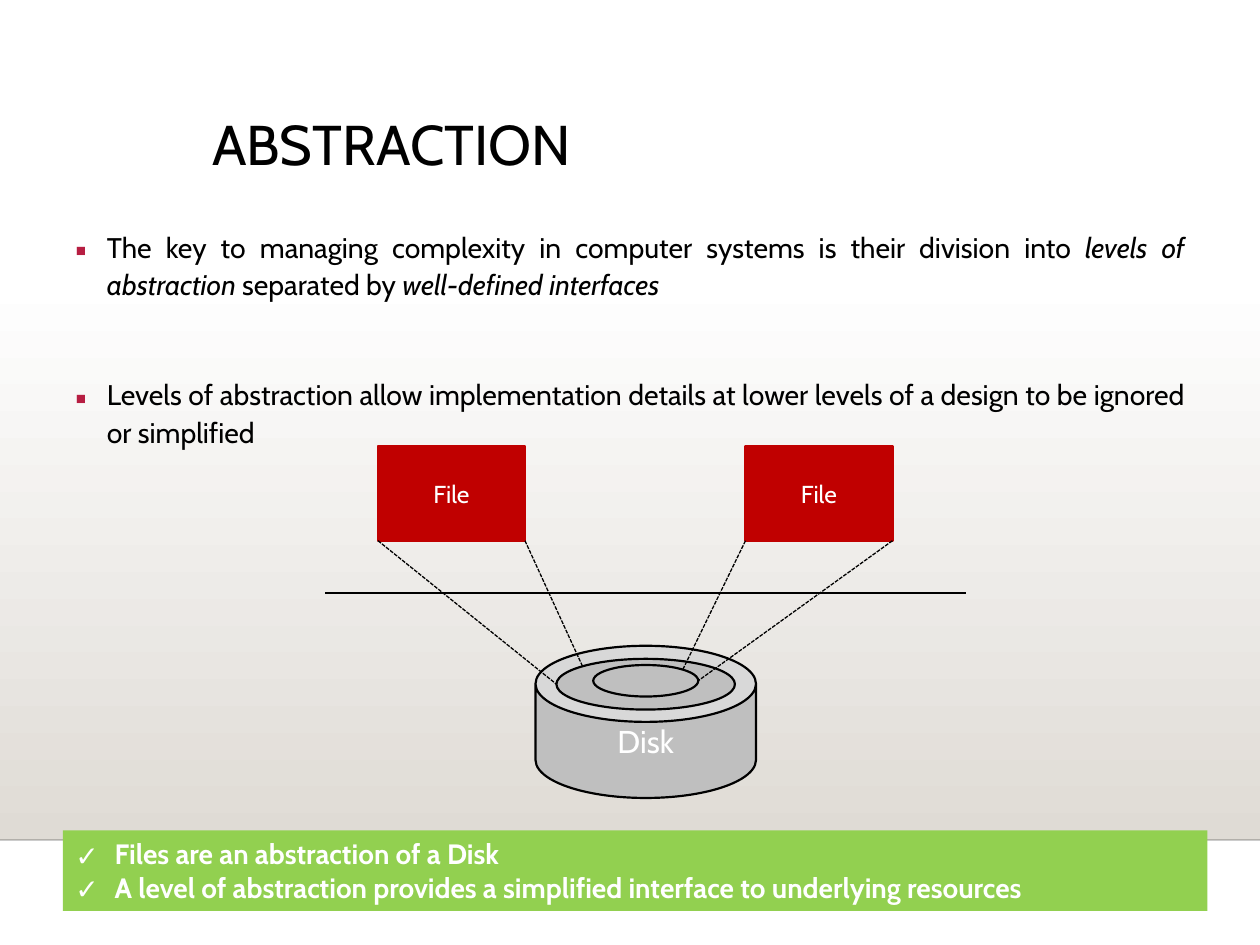
from lxml.etree import SubElement
from pptx import Presentation
from pptx.dml.color import RGBColor
from pptx.enum.dml import MSO_LINE
from pptx.enum.shapes import MSO_CONNECTOR, MSO_SHAPE
from pptx.enum.text import MSO_ANCHOR, MSO_AUTO_SIZE, PP_ALIGN
from pptx.oxml.ns import qn
from pptx.util import Pt

FONT = "Cabin"
BLACK = RGBColor(0x00, 0x00, 0x00)
WHITE = RGBColor(0xFF, 0xFF, 0xFF)
BEIGE = RGBColor(0xDF, 0xDB, 0xD5)
RED = RGBColor(0xC0, 0x00, 0x00)
GREY = RGBColor(0xBF, 0xBF, 0xBF)
GREEN = RGBColor(0x92, 0xD0, 0x50)
CRIMSON = RGBColor(0xB7, 0x1E, 0x42)


def set_font(para, size, color, bold=False):
    font = para.font
    font.name, font.size, font.bold = FONT, Pt(size), bold
    font.color.rgb = color


def add_bullet(para, symbol, indent, color):
    props = para._p.get_or_add_pPr()
    props.set("marL", str(Pt(indent)))
    props.set("indent", str(-Pt(indent)))
    bullet_color = SubElement(props, qn("a:buClr"))
    SubElement(bullet_color, qn("a:srgbClr"), val=str(color))
    SubElement(props, qn("a:buFont"), typeface="Noto Sans Symbols")
    SubElement(props, qn("a:buChar"), char=symbol)


def add_block(page, kind, left, top, width, height, fill, line=None):
    block = page.shapes.add_shape(kind, Pt(left), Pt(top), Pt(width), Pt(height))
    block.shadow.inherit = False
    block.fill.solid()
    block.fill.fore_color.rgb = fill
    if line is None:
        block.line.fill.background()
    else:
        block.line.color.rgb = line
        block.line.width = Pt(1.25)
    return block


def add_label(block, text, size):
    block.text_frame.vertical_anchor = MSO_ANCHOR.MIDDLE
    para = block.text_frame.paragraphs[0]
    para.text = text
    para.alignment = PP_ALIGN.CENTER
    set_font(para, size, WHITE)


def add_line(page, start, end, width, dash=None):
    line = page.shapes.add_connector(
        MSO_CONNECTOR.STRAIGHT, *(Pt(value) for value in (*start, *end)))
    line.line.color.rgb = BLACK
    line.line.width = Pt(width)
    if dash:
        line.line.dash_style = dash
    SubElement(line._element.spPr, qn("a:effectLst"))
    return line


def add_backdrop(page, left, top, width, height):
    # Fade from white down to beige, closed by a faint rule
    fade = add_block(page, MSO_SHAPE.RECTANGLE, left, top, width, height, BEIGE)
    fade.fill.gradient()
    fade.fill.gradient_angle = 270
    for stop, color in zip(fade.fill.gradient_stops, (WHITE, BEIGE)):
        stop.color.rgb = color
    bottom = top + height
    rule = add_line(page, (left, bottom), (left + width, bottom), 1)
    color = next(rule._element.spPr.iter(qn("a:srgbClr")))
    SubElement(color, qn("a:alpha"), val="20000")


def add_title(page, left, top, width, height):
    title = page.shapes.title
    title.left, title.top, title.width, title.height = map(Pt, (left, top, width, height))
    frame = title.text_frame
    frame.auto_size = MSO_AUTO_SIZE.NONE
    frame.vertical_anchor = MSO_ANCHOR.TOP
    para = frame.paragraphs[0]
    para.text = "ABSTRACTION"
    para.alignment = PP_ALIGN.LEFT
    para.line_spacing = 0.9
    set_font(para, 32, BLACK)


def add_body(page, left, top, width, height):
    points = [
        [("The key to managing complexity in computer systems is their division into ", False),
         ("levels of abstraction ", True),
         ("separated by ", False),
         ("well-defined interfaces", True)],
        [("Levels of abstraction allow implementation details at lower levels of a design "
          "to be ignored or simplified", False)],
    ]
    frame = page.shapes.add_textbox(Pt(left), Pt(top), Pt(width), Pt(height)).text_frame
    frame.word_wrap = True
    for index, point in enumerate(points):
        para = frame.add_paragraph() if index else frame.paragraphs[0]
        para.alignment = PP_ALIGN.JUSTIFY
        para.line_spacing = 1.1
        para.space_before = Pt(41.5 if index else 0)
        add_bullet(para, "▪", 18, CRIMSON)
        set_font(para, 16.2, BLACK)
        for text, italic in point:
            span = para.add_run()
            span.text = text
            span.font.italic = italic


def add_diagram(page, left, top, width, height):
    center = left + width / 2
    file_width, file_height = 84, 54
    file_lefts = (left + 30, left + 240)

    # Files above the interface line
    for file_left in file_lefts:
        block = add_block(page, MSO_SHAPE.RECTANGLE, file_left, top,
                          file_width, file_height, RED, RED)
        add_label(block, "File", 14)
    add_line(page, (left, top + 84), (left + width, top + 84), 1)

    # Disk with two tracks
    disk_height = 87
    disk = add_block(page, MSO_SHAPE.CAN, center - 63, top + height - disk_height,
                     126, disk_height, GREY, BLACK)
    disk.adjustments[0] = 0.5
    add_label(disk, "Disk", 18)
    for track_top, track_width, track_height in ((121.5, 102, 29), (125, 60, 18)):
        add_block(page, MSO_SHAPE.OVAL, center - track_width / 2, top + track_top,
                  track_width, track_height, GREY, BLACK)

    # Dashed rays from the lower file corners to the tracks
    corners = [x for file_left in file_lefts for x in (file_left, file_left + file_width)]
    targets = ((-51, 136), (-36, 126), (21, 128), (30, 134))
    for corner, (across, down) in zip(corners, targets):
        add_line(page, (corner, top + file_height), (center + across, top + down),
                 0.75, MSO_LINE.SQUARE_DOT)


def add_summary(page, left, top, width, height):
    bar = add_block(page, MSO_SHAPE.RECTANGLE, left, top, width, height, GREEN)
    frame = bar.text_frame
    frame.vertical_anchor = MSO_ANCHOR.TOP
    lines = ("Files are an abstraction of a Disk",
             "A level of abstraction provides a simplified interface to underlying resources")
    for index, text in enumerate(lines):
        para = frame.add_paragraph() if index else frame.paragraphs[0]
        para.text = text
        para.alignment = PP_ALIGN.LEFT
        add_bullet(para, "✓", 22.5, WHITE)
        set_font(para, 16, WHITE, bold=True)


def main():
    deck = Presentation()
    deck.slide_width, deck.slide_height = Pt(720), Pt(540)
    page = deck.slides.add_slide(deck.slide_layouts[5])
    add_backdrop(page, 0, 158.5, 720, 321.5)
    add_title(page, 114, 63.5, 517.5, 83)
    add_body(page, 36, 126, 648, 138)
    add_diagram(page, 186, 255, 366, 201)
    add_summary(page, 36, 474.5, 654, 46)
    deck.save("out.pptx")


if __name__ == "__main__":
    main()
